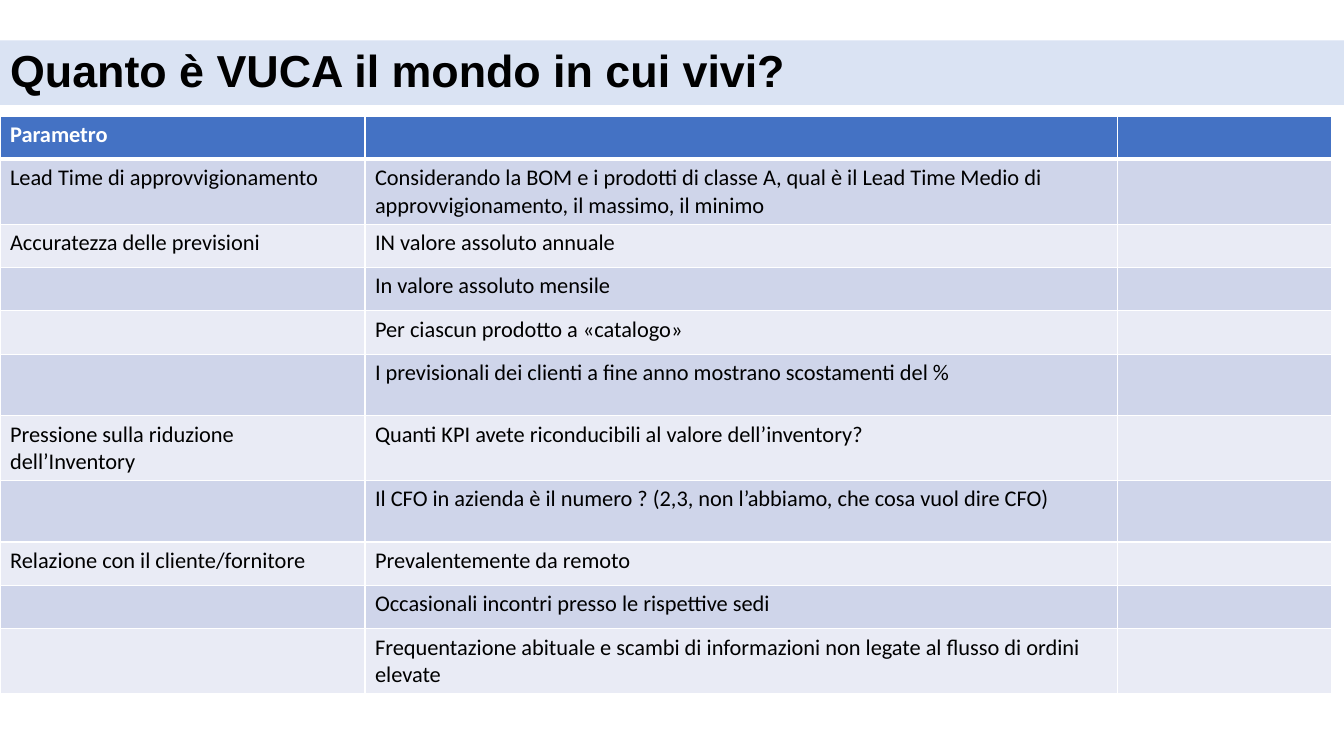
from lxml import etree
from pptx import Presentation
from pptx import util as u
from pptx.dml.color import RGBColor
from pptx.enum import text
from pptx.oxml.ns import qn

TITLE = "Quanto è VUCA il mondo in cui vivi?"
ROWS = [
    ("Parametro", ""),
    ("Lead Time di approvvigionamento",
     "Considerando la BOM e i prodotti di classe A, qual è il Lead Time Medio di "
     "approvvigionamento, il massimo, il minimo"),
    ("Accuratezza delle previsioni", "IN valore assoluto annuale"),
    ("", "In valore assoluto mensile"),
    ("", "Per ciascun prodotto a «catalogo»"),
    ("", "I previsionali dei clienti a fine anno mostrano scostamenti del %"),
    ("Pressione sulla riduzione dell’Inventory",
     "Quanti KPI avete riconducibili al valore dell’inventory?"),
    ("", "Il CFO in azienda è il numero ? (2,3, non l’abbiamo, che cosa vuol dire CFO)"),
    ("Relazione con il cliente/fornitore", "Prevalentemente da remoto"),
    ("", "Occasionali incontri presso le rispettive sedi"),
    ("", "Frequentazione abituale e scambi di informazioni non legate al flusso "
         "di ordini elevate"),
]
COLORS = {"header": "4472C4", "odd": "CFD5EA", "even": "E9EBF5",
          "band": "DAE3F3", "white": "FFFFFF", "black": "000000"}
WIDTH, HEIGHT = 13.33, 7.5
COLUMNS = (3.62, 7.46, 2.13)
LOW, TALL = 0.43, 0.61
TALL_ROWS = {1, 5, 7, 10}
TABLE_TOP = 1.15
BAND = {"left": 0, "top": 0.4, "width": WIDTH, "height": 0.64}


def rgb(name):
    return RGBColor.from_string(COLORS[name])


def paint(obj, name):
    obj.fill.solid()
    obj.fill.fore_color.rgb = rgb(name)


def style(font, name, size, color, bold):
    for key, value in {"name": name, "size": u.Pt(size), "bold": bold}.items():
        setattr(font, key, value)
    font.color.rgb = rgb(color)


def add_borders(cell, bottom):
    tc_pr = cell._tc.get_or_add_tcPr()
    sides = {"lnL": 1, "lnR": 1, "lnT": 1, "lnB": bottom}
    for i, (side, points) in enumerate(sides.items()):
        ln = etree.Element(qn("a:" + side), w=str(u.Pt(points)))
        solid = etree.SubElement(ln, qn("a:solidFill"))
        etree.SubElement(solid, qn("a:srgbClr"), val=COLORS["white"])
        tc_pr.insert(i, ln)


def add_title(s):
    sp = s.shapes.title
    for key, value in BAND.items():
        setattr(sp, key, u.Inches(value))
    paint(sp, "band")
    tf = sp.text_frame
    tf.text = TITLE
    tf.word_wrap = True
    tf.auto_size = text.MSO_AUTO_SIZE.NONE
    tf.vertical_anchor = text.MSO_ANCHOR.MIDDLE
    p = tf.paragraphs[0]
    p.alignment = text.PP_ALIGN.LEFT
    p.line_spacing = 0.9
    style(p.runs[0].font, "Arial", 32, "black", True)


def add_parameters(s):
    heights = [TALL if i in TALL_ROWS else LOW for i in range(len(ROWS))]
    box = [u.Inches(v) for v in (0, TABLE_TOP, sum(COLUMNS), sum(heights))]
    table = s.shapes.add_table(len(ROWS), len(COLUMNS), *box).table
    for column, width in zip(table.columns, COLUMNS):
        column.width = u.Inches(width)
    for i, (row, height, words) in enumerate(zip(table.rows, heights, ROWS)):
        row.height = u.Inches(height)
        header = i == 0
        fill = "header" if header else "odd" if i % 2 else "even"
        for cell, word in zip(row.cells, (*words, "")):
            paint(cell, fill)
            add_borders(cell, 3 if header or i == len(ROWS) and header else 1)
            if word:
                cell.text = word
                style(cell.text_frame.paragraphs[0].runs[0].font, "Calibri", 16,
                      "white" if header else "black", header)


def main():
    prs = Presentation()
    prs.slide_width, prs.slide_height = u.Inches(WIDTH), u.Inches(HEIGHT)
    s = prs.slides.add_slide(prs.slide_layouts[5])
    add_parameters(s)
    add_title(s)
    prs.save("out.pptx")


if __name__ == "__main__":
    main()
